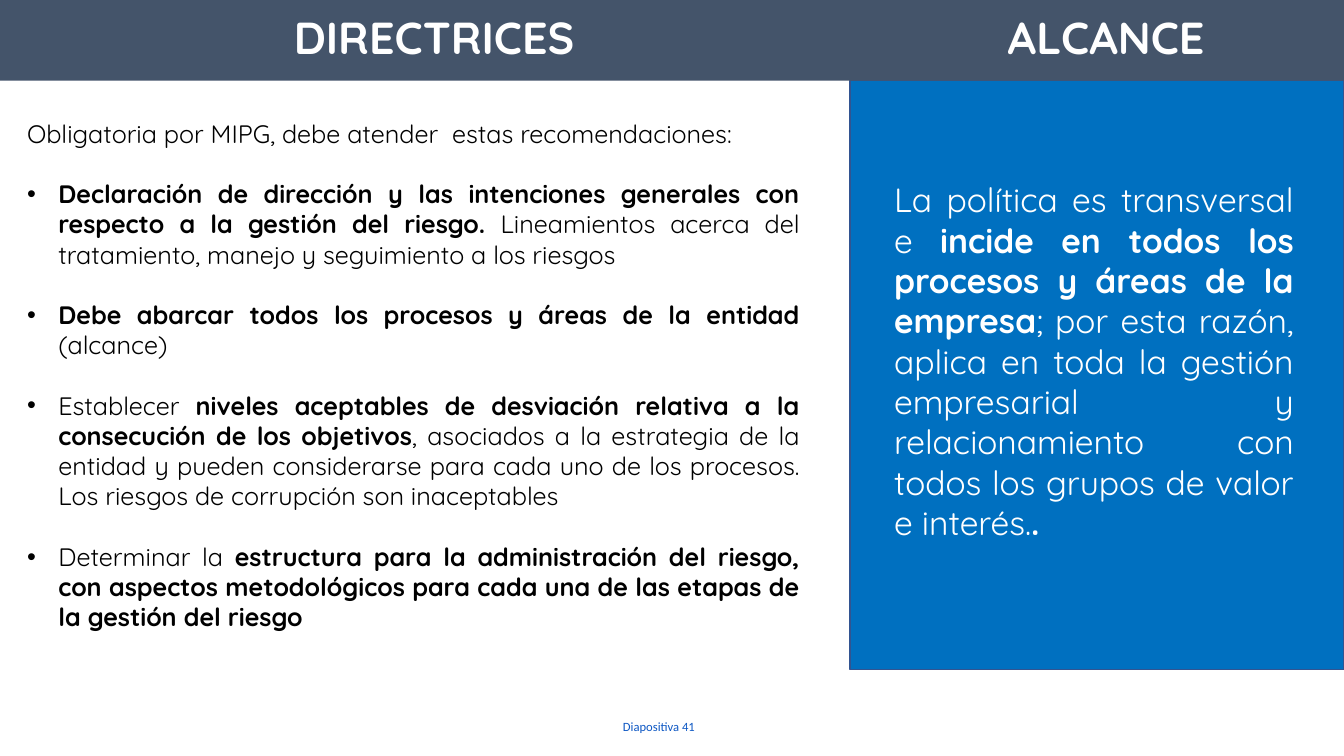
"""Build the slide on directives and scope of the risk policy."""
from dataclasses import dataclass

from lxml import etree
from pptx import Presentation
from pptx.dml.color import RGBColor
from pptx.enum.shapes import MSO_SHAPE
from pptx.enum.text import MSO_ANCHOR, PP_ALIGN
from pptx.oxml.ns import qn
from pptx.util import Inches, Pt

COLORS = {
    "slate": "44546A",
    "blue": "0070C0",
    "edge": "325491",
    "footer": "0E58C4",
    "white": "FFFFFF",
    "black": "000000",
}


@dataclass(frozen=True)
class Area:
    left: float
    top: float
    width: float
    height: float

    def lengths(self):
        return [Inches(n) for n in (self.left, self.top, self.width, self.height)]


@dataclass(frozen=True)
class Span:
    text: str
    bold: bool = False


@dataclass(frozen=True)
class Header:
    text: str
    area: Area


@dataclass(frozen=True)
class TextBlock:
    area: Area
    paragraphs: list[list[Span]]
    style: dict


HEADERS = [
    Header(" DIRECTRICES", Area(0, -0.01, 8.49, 0.81)),
    Header(" ALCANCE", Area(8.49, -0.01, 4.84, 0.81)),
]

INTRO = [Span("Obligatoria por MIPG, debe atender  estas recomendaciones:")]

GUIDELINES = [
    [
        Span("Declaración de dirección y las intenciones generales con respecto "
             "a la gestión del riesgo. ", True),
        Span("Lineamientos acerca del tratamiento, manejo y seguimiento a los riesgos"),
    ],
    [
        Span("Debe abarcar todos los procesos y áreas de la entidad ", True),
        Span("(alcance)"),
    ],
    [
        Span("Establecer"),
        Span(" niveles aceptables de desviación relativa a la consecución de "
             "los objetivos", True),
        Span(", asociados a la estrategia de la entidad y pueden considerarse para "
             "cada uno de los procesos. Los riesgos de corrupción son inaceptables"),
    ],
    [
        Span("Determinar la "),
        Span("estructura para la administración del riesgo, con aspectos metodológicos "
             "para cada una de las etapas de la gestión del riesgo", True),
    ],
]

SCOPE = [
    Span("La política es transversal e "),
    Span("incide en todos los procesos y áreas de la empresa", True),
    Span("; por esta razón, aplica en toda la gestión empresarial y relacionamiento "
         "con todos los grupos de valor e interés."),
    Span(".", True),
]

BLOCKS = [
    TextBlock(Area(0.17, 1.12, 7.86, 5.25), [INTRO, *GUIDELINES],
              dict(size=18, color="black", gap=21.6, bullets_from=1)),
    TextBlock(Area(8.77, 1.73, 4.16, 3.74), [SCOPE],
              dict(size=24, color="white")),
    TextBlock(Area(5.15, 7.08, 2.77, 0.25), [[Span("Diapositiva 41")]],
              dict(size=9, color="footer", font="Calibri", align=PP_ALIGN.CENTER)),
]


def add_bullet(para) -> None:
    """Give a paragraph a hanging bullet."""
    properties = para._p.get_or_add_pPr()
    properties.set("marL", str(Inches(0.31)))
    properties.set("indent", str(-Inches(0.31)))
    etree.SubElement(properties, qn("a:buFont")).set("typeface", "Arial")
    etree.SubElement(properties, qn("a:buChar")).set("char", "•")


def write_text(frame, paragraphs: list[list[Span]], *, size: float, color: str,
               font: str = "Quicksand", align=PP_ALIGN.JUSTIFY, gap: float = 0,
               bullets_from: int | None = None, line_spacing: float = 1.0) -> None:
    """Fill a text frame with formatted paragraphs."""
    frame.word_wrap = True
    for index, spans in enumerate(paragraphs):
        para = frame.add_paragraph() if index else frame.paragraphs[0]
        if bullets_from is not None and index >= bullets_from:
            add_bullet(para)
        para.alignment = align
        para.line_spacing = line_spacing
        if index and gap:
            para.space_before = Pt(gap)
        for span in spans:
            run = para.add_run()
            run.text = span.text
            run.font.name = font
            run.font.size = Pt(size)
            run.font.bold = span.bold
            run.font.color.rgb = RGBColor.from_string(COLORS[color])


def add_panel(page, area: Area, fill: str, edge: str | None = None):
    """Draw a filled rectangle with an optional outline."""
    panel = page.shapes.add_shape(MSO_SHAPE.RECTANGLE, *area.lengths())
    panel.shadow.inherit = False
    panel.fill.solid()
    panel.fill.fore_color.rgb = RGBColor.from_string(COLORS[fill])
    if edge:
        panel.line.color.rgb = RGBColor.from_string(COLORS[edge])
        panel.line.width = Pt(1)
    else:
        panel.line.fill.background()
    return panel


def add_header(page, header: Header) -> None:
    """Draw a title band with centred text."""
    frame = add_panel(page, header.area, "slate").text_frame
    frame.vertical_anchor = MSO_ANCHOR.MIDDLE
    frame.margin_left = frame.margin_right = Inches(0.06)
    frame.margin_top = frame.margin_bottom = Inches(0.03)
    write_text(frame, [[Span(header.text, True)]], size=32, color="white",
               align=PP_ALIGN.CENTER, line_spacing=0.9)


def add_text(page, block: TextBlock) -> None:
    """Place a text box on the slide."""
    box = page.shapes.add_textbox(*block.area.lengths())
    write_text(box.text_frame, block.paragraphs, **block.style)


def main() -> None:
    """Assemble and save the deck."""
    deck = Presentation()
    deck.slide_width, deck.slide_height = Inches(13.33), Inches(7.5)
    page = deck.slides.add_slide(deck.slide_layouts[6])
    add_panel(page, Area(8.43, 0.8, 4.9, 5.84), "blue", "edge")
    for header in HEADERS:
        add_header(page, header)
    for block in BLOCKS:
        add_text(page, block)
    deck.save("out.pptx")


if __name__ == "__main__":
    main()
